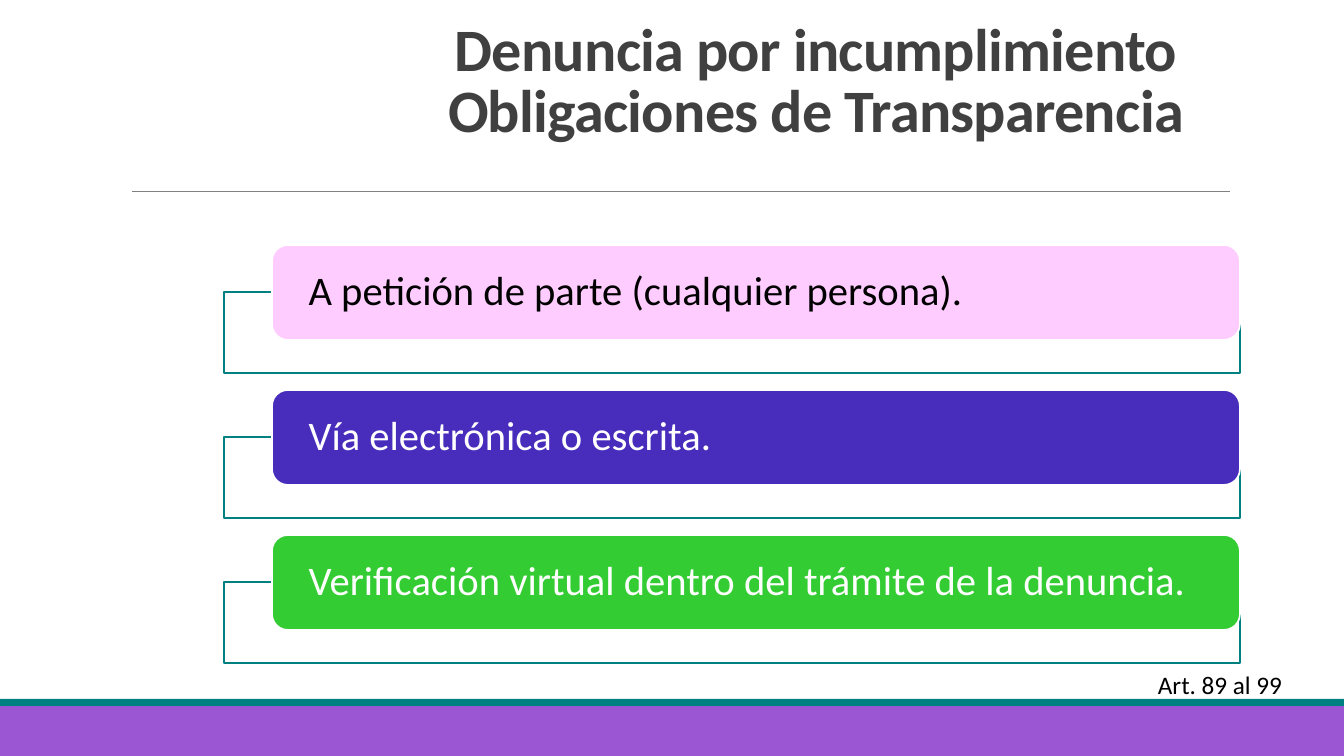
from dataclasses import dataclass

import pptx
import pptx.dml.color
import pptx.enum.shapes
import pptx.enum.text
import pptx.oxml
import pptx.oxml.ns
import pptx.util

EMU_PER_PX = 914400 / 100.8
FONT = "Calibri"
COLORS = {
    "white": "FFFFFF",
    "black": "000000",
    "title": "404040",
    "rule": "808080",
    "teal": "008080",
    "purple": "9B57D3",
    "pink": "FFCCFF",
    "indigo": "482CBC",
    "green": "33CC33",
}
SHAPES = pptx.enum.shapes.MSO_SHAPE
ALIGN = pptx.enum.text.PP_ALIGN
ANCHOR = pptx.enum.text.MSO_ANCHOR
AUTO_SIZE = pptx.enum.text.MSO_AUTO_SIZE


@dataclass(frozen=True)
class Box:
    left: int
    top: int
    width: int
    height: int

    def emu(self) -> list[int]:
        return [px(v) for v in (self.left, self.top, self.width, self.height)]

    def lowered(self, distance: int) -> "Box":
        return Box(self.left, self.top + distance, self.width, self.height)


@dataclass(frozen=True)
class Item:
    text: str
    fill: str
    color: str


ITEMS = [
    Item("A petición de parte (cualquier persona).", "pink", "black"),
    Item("Vía electrónica o escrita.", "indigo", "white"),
    Item("Verificación virtual dentro del trámite de la denuncia.", "green", "white"),
]
ITEM_PITCH = 145
FRAME = Box(224, 292, 1016, 81)
BAR = Box(272, 245, 968, 95)
BAR_INSET = 32


def px(length: int) -> int:
    return round(length * EMU_PER_PX)


def rgb(name: str) -> pptx.dml.color.RGBColor:
    return pptx.dml.color.RGBColor.from_string(COLORS[name])


def apply(target, values: dict) -> None:
    for key, value in values.items():
        setattr(target, key, value)


def add_panel(slide, kind, box: Box, fill: str, line: str | None = None):
    panel = slide.shapes.add_shape(kind, *box.emu())
    panel.shadow.inherit = False
    panel.fill.solid()
    panel.fill.fore_color.rgb = rgb(fill)
    if line is None:
        panel.line.fill.background()
    else:
        panel.line.color.rgb = rgb(line)
        panel.line.width = pptx.util.Pt(1.25)
    return panel


def write(shape, text: str, size: int, color: str, frame: dict,
          paragraph: dict, bold: bool = False) -> None:
    apply(shape.text_frame, {"text": text, "word_wrap": True, **frame})
    line = shape.text_frame.paragraphs[0]
    apply(line, paragraph)
    for run in line.runs:
        apply(run.font, {"name": FONT, "size": pptx.util.Pt(size), "bold": bold})
        run.font.color.rgb = rgb(color)


def add_rule(slide, left: int, right: int, y: int) -> None:
    rule = slide.shapes.add_connector(
        pptx.enum.shapes.MSO_CONNECTOR.STRAIGHT, px(left), px(y), px(right), px(y))
    rule.line.color.rgb = rgb("rule")
    rule.line.width = pptx.util.Pt(0.5)
    rule._element.spPr.append(pptx.oxml.parse_xml(
        f"<a:effectLst {pptx.oxml.ns.nsdecls('a')}/>"))


def add_title(slide, text: str, box: Box) -> None:
    title = slide.shapes.title
    apply(title, dict(zip(("left", "top", "width", "height"), box.emu())))
    write(title, text, 43, "title",
          {"vertical_anchor": ANCHOR.BOTTOM, "auto_size": AUTO_SIZE.NONE},
          {"alignment": ALIGN.CENTER, "line_spacing": 0.85}, bold=True)
    for run in title.text_frame.paragraphs[0].runs:
        run.font._element.set("spc", "-50")


def add_item(slide, item: Item, offset: int) -> None:
    """Draw the coloured bar with its text over a translucent outlined frame."""
    frame = add_panel(slide, SHAPES.RECTANGLE, FRAME.lowered(offset), "white", "teal")
    white = frame.fill._xPr.find(".//" + pptx.oxml.ns.qn("a:srgbClr"))
    white.append(pptx.oxml.parse_xml(
        f"<a:alpha {pptx.oxml.ns.nsdecls('a')} val=\"90000\"/>"))
    bar = add_panel(slide, SHAPES.ROUNDED_RECTANGLE, BAR.lowered(offset),
                    item.fill, "white")
    write(bar, item.text, 29, item.color,
          {"vertical_anchor": ANCHOR.MIDDLE, "margin_left": px(BAR_INSET),
           "margin_right": px(BAR_INSET), "margin_top": 0, "margin_bottom": 0},
          {"alignment": ALIGN.LEFT, "line_spacing": 0.9})


def main() -> None:
    deck = pptx.Presentation()
    apply(deck, {"slide_width": px(1344), "slide_height": px(756)})
    slide = deck.slides.add_slide(deck.slide_layouts[5])

    add_panel(slide, SHAPES.RECTANGLE, Box(0, 706, 1344, 50), "purple")
    add_panel(slide, SHAPES.RECTANGLE, Box(0, 699, 1344, 7), "teal")
    add_rule(slide, 132, 1230, 191)
    add_title(slide, "Denuncia por incumplimiento\vObligaciones de Transparencia",
              Box(288, 64, 1056, 86))
    for index, item in enumerate(ITEMS):
        add_item(slide, item, index * ITEM_PITCH)

    articles = slide.shapes.add_textbox(*Box(1138, 664, 164, 40).emu())
    write(articles, "Art. 89 al 99", 18, "black",
          {"auto_size": AUTO_SIZE.SHAPE_TO_FIT_TEXT}, {"alignment": ALIGN.CENTER})
    deck.save("out.pptx")


if __name__ == "__main__":
    main()
